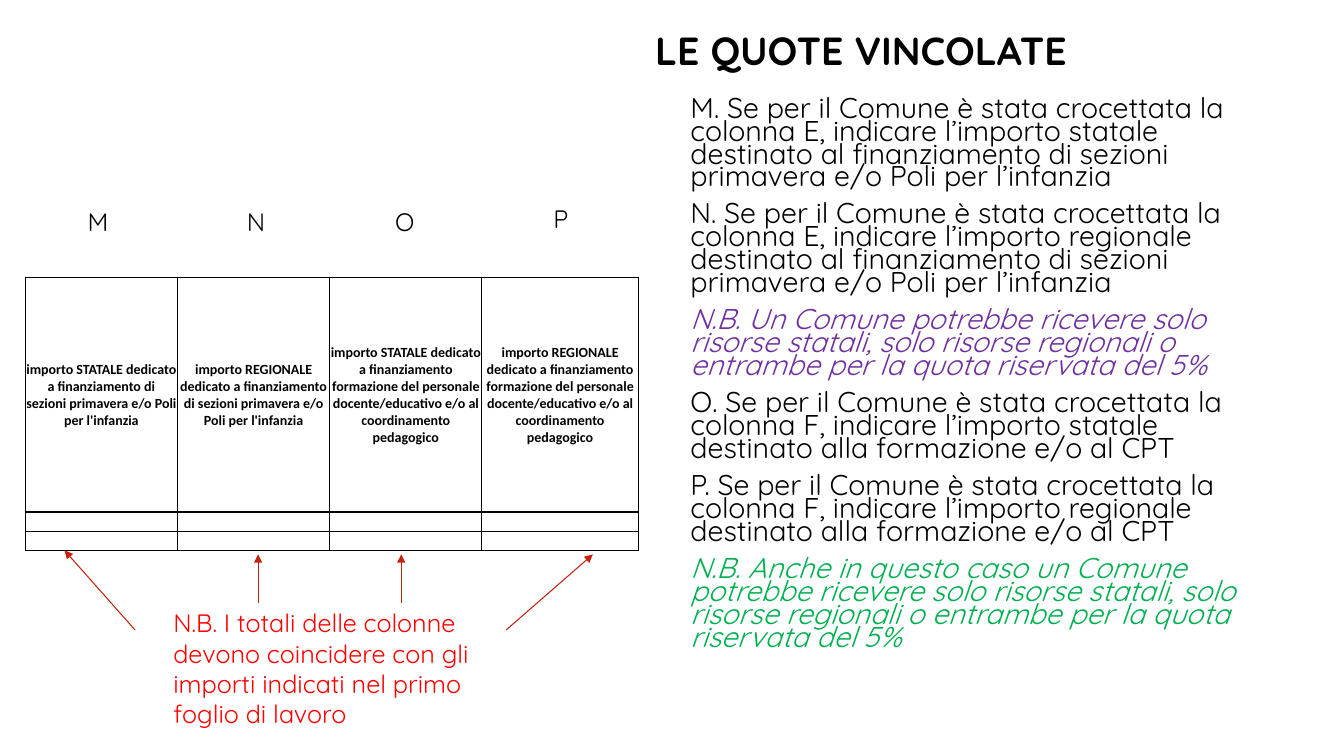
from lxml import etree
from pptx import Presentation
from pptx.dml.color import RGBColor
from pptx.enum.shapes import MSO_CONNECTOR
from pptx.enum.text import MSO_ANCHOR, PP_ALIGN
from pptx.oxml.ns import qn
from pptx.util import Pt

PX = 9144
LINE = MSO_CONNECTOR.STRAIGHT
MIDDLE = MSO_ANCHOR.MIDDLE
CENTER = PP_ALIGN.CENTER

BLACK, RED, ARROW = "000000", "FF0000", "C4220D"
PURPLE, GREEN = "7030A0", "00B050"
FACE = "Quicksand"

HEADS = [
    "importo STATALE dedicato a finanziamento di sezioni primavera e/o Poli per l'infanzia",
    "importo REGIONALE dedicato a finanziamento di sezioni primavera e/o Poli per l'infanzia",
    "importo STATALE dedicato a finanziamento formazione del personale docente/educativo e/o al coordinamento pedagogico",
    "importo REGIONALE dedicato a finanziamento formazione del personale docente/educativo e/o al coordinamento pedagogico",
]
WIDTHS = [151, 151, 151, 155]
HEIGHTS = [233, 19, 19]

RULES = [
    ("M. Se per il Comune è stata crocettata la colonna E, indicare l’importo statale destinato al finanziamento di sezioni primavera e/o Poli per l’infanzia", BLACK),
    ("N. Se per il Comune è stata crocettata la colonna E, indicare l’importo regionale destinato al finanziamento di sezioni primavera e/o Poli per l’infanzia", BLACK),
    ("N.B. Un Comune potrebbe ricevere solo risorse statali, solo risorse regionali o entrambe per la quota riservata del 5%", PURPLE),
    ("O. Se per il Comune è stata crocettata la colonna F, indicare l’importo statale destinato alla formazione e/o al CPT", BLACK),
    ("P. Se per il Comune è stata crocettata la colonna F, indicare l’importo regionale destinato alla formazione e/o al CPT", BLACK),
    ("N.B. Anche in questo caso un Comune potrebbe ricevere solo risorse statali, solo risorse regionali o entrambe per la quota riservata del 5%", GREEN),
]
NOTE = "N.B. I totali delle colonne devono coincidere con gli importi indicati nel primo foglio di lavoro"
MARKS = [("M", 77, 200), ("N", 235, 200), ("O", 382, 200), ("P", 539, 197)]
ARROWS = [
    (134, 625, 64, 546),
    (256, 598, 256, 550),
    (398, 598, 398, 550),
    (502, 625, 588, 550),
]


def emu(*nums):
    return [num * PX for num in nums]


def color(code):
    return RGBColor.from_string(code)


def style(item, **form):
    for key, value in form.items():
        setattr(item, key, value)


def write(para, text, size, code, **form):
    run = para.add_run()
    run.text = text
    style(run.font, size=Pt(size), **form)
    run.font.color.rgb = color(code)


def add_text(slide, box, lines, size, bold=False, **form):
    frame = slide.shapes.add_textbox(*emu(*box)).text_frame
    frame.word_wrap = True
    for num, (text, code) in enumerate(lines):
        para = frame.add_paragraph() if num else frame.paragraphs[0]
        if num:
            style(para, **form)
        elif "line_spacing" in form:
            para.line_spacing = form["line_spacing"]
        write(para, text, size, code, name=FACE, bold=bold,
              italic=code in (PURPLE, GREEN))


def add_edges(cell, top, foot):
    props = cell._tc.get_or_add_tcPr()
    edges = [("a:lnL", 1), ("a:lnR", 1), ("a:lnT", top), ("a:lnB", foot)]
    for spot, (tag, width) in enumerate(edges):
        edge = etree.Element(qn(tag), w=str(Pt(width)))
        fill = etree.SubElement(edge, qn("a:solidFill"))
        etree.SubElement(fill, qn("a:srgbClr"), val=BLACK)
        props.insert(spot, edge)


def add_grid(slide):
    rows, cols = len(HEIGHTS), len(WIDTHS)
    box = emu(25, 275, sum(WIDTHS), sum(HEIGHTS))
    table = slide.shapes.add_table(rows, cols, *box).table
    style(table, first_row=False, horz_banding=False)
    for col, width in zip(table.columns, WIDTHS):
        col.width = width * PX
    for num, height in enumerate(HEIGHTS):
        table.rows[num].height = height * PX
        for spot, head in enumerate(HEADS):
            cell = table.cell(num, spot)
            style(cell, vertical_anchor=MIDDLE, margin_left=PX,
                  margin_right=PX, margin_top=PX, margin_bottom=0)
            cell.fill.background()
            add_edges(cell, 0.5 if num == 2 else 1, 0.5 if num else 1)
            para = cell.text_frame.paragraphs[0]
            if num:
                etree.SubElement(para._p, qn("a:endParaRPr"), sz="1000")
            else:
                para.alignment = CENTER
                write(para, head, 10, BLACK, name="Calibri", bold=True)


def add_arrow(slide, ends):
    arrow = slide.shapes.add_connector(LINE, *emu(*ends))
    arrow.line.width = Pt(0.75)
    arrow.line.color.rgb = color(ARROW)
    etree.SubElement(arrow.line._get_or_add_ln(), qn("a:tailEnd"), type="triangle")
    etree.SubElement(arrow._element.spPr, qn("a:effectLst"))


def main():
    deck = Presentation()
    deck.slide_width, deck.slide_height = emu(1333, 750)
    slide = deck.slides.add_slide(deck.slide_layouts[6])
    add_grid(slide)
    add_text(slide, (675, 94, 583, 586), RULES, 20.4,
             line_spacing=0.67, space_before=Pt(10))
    for mark, left, top in MARKS:
        add_text(slide, (left, top, 57, 40), [(mark, BLACK)], 18)
    add_text(slide, (640, 21, 433, 57), [("LE QUOTE VINCOLATE", BLACK)], 28, bold=True)
    add_text(slide, (162, 598, 331, 131), [(NOTE, RED)], 18)
    for ends in ARROWS:
        add_arrow(slide, ends)
    deck.save("out.pptx")


if __name__ == "__main__":
    main()
